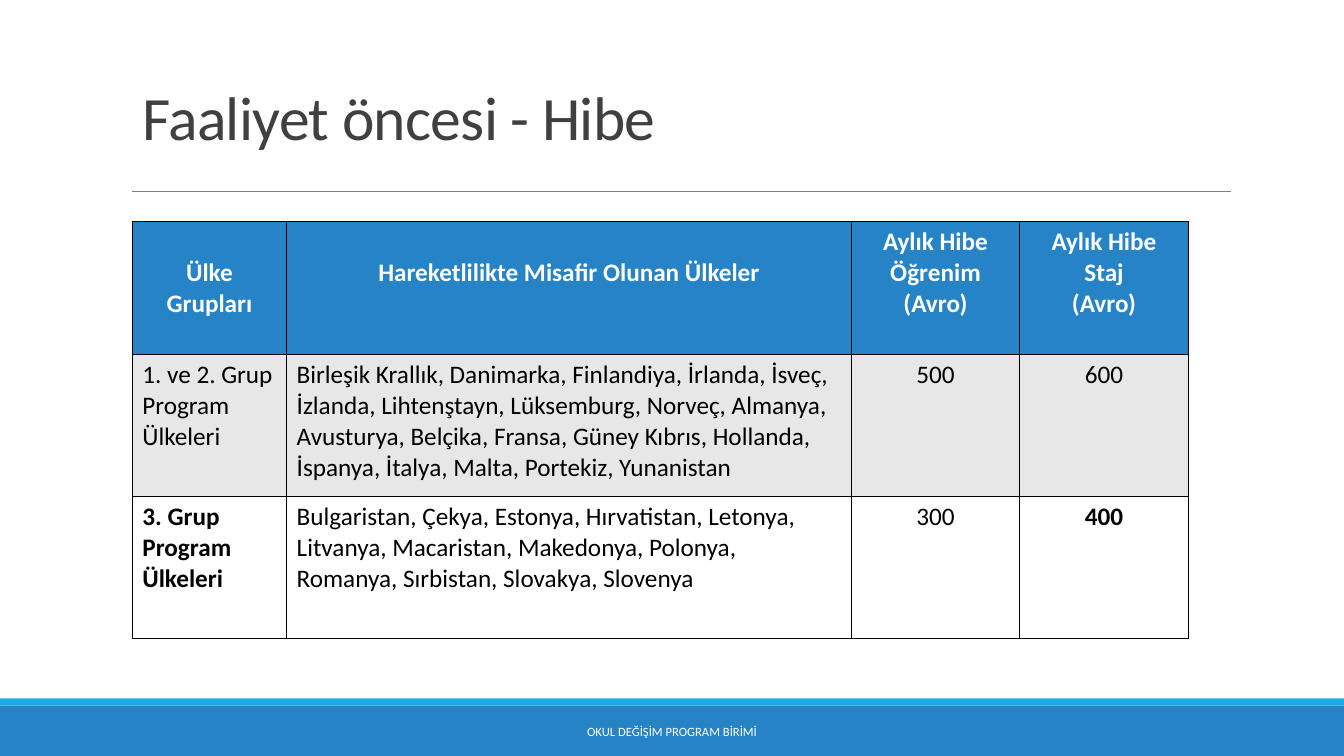
from lxml import etree
from pptx import Presentation
from pptx import util as u
from pptx.dml.color import RGBColor
from pptx.enum import shapes, text
from pptx.oxml import ns

PX = 9525
FONT = "Calibri"
COLORS = {
    "blue": "2683C6", "sky": "1CADE4", "rule": "808080", "title": "404040",
    "white": "FFFFFF", "black": "000000", "band": "E7E7E7",
}
COLUMNS = [147, 538, 160, 161]
ROWS = [127, 135, 135]
LINE = 29
HEADERS = [
    ["Ülke Grupları"],
    ["Hareketlilikte Misafir Olunan Ülkeler"],
    ["Aylık Hibe Öğrenim (Avro)"],
    ["Aylık Hibe Staj", "(Avro)"],
]
GRANTS = [
    ["1. ve 2. Grup Program Ülkeleri",
     "Birleşik Krallık, Danimarka, Finlandiya, İrlanda, İsveç, İzlanda, "
     "Lihtenştayn, Lüksemburg, Norveç, Almanya, Avusturya, Belçika, Fransa, "
     "Güney Kıbrıs, Hollanda, İspanya, İtalya, Malta, Portekiz, Yunanistan",
     "500", "600"],
    ["3. Grup Program Ülkeleri",
     "Bulgaristan, Çekya, Estonya, Hırvatistan, Letonya, Litvanya, "
     "Macaristan, Makedonya, Polonya, Romanya, Sırbistan, Slovakya, Slovenya",
     "300", "400"],
]
BOLD_CELLS = {(2, 0), (2, 3)}


def emu(*lengths):
    """Turn px lengths into EMU."""
    return [u.Emu(length * PX) for length in lengths]


def color(name):
    """Return a named colour."""
    return RGBColor.from_string(COLORS[name])


def write(frame, lines, size=18, ink="black", bold=False, align="LEFT",
          spacing=None, tracking=None):
    """Write one paragraph per line into a text frame."""
    frame.word_wrap = True
    for index, line in enumerate(lines):
        para = frame.paragraphs[0] if index == 0 else frame.add_paragraph()
        para.alignment = getattr(text.PP_ALIGN, align)
        if spacing:
            para.line_spacing = spacing
        span = para.add_run()
        span.text = line
        span.font.name = FONT
        span.font.size = u.Pt(size)
        span.font.bold = bold
        span.font.color.rgb = color(ink)
        if tracking:
            span.font._element.set("spc", str(tracking))


def add_bar(page, box, fill):
    """Draw a plain filled rectangle."""
    bar = page.shapes.add_shape(shapes.MSO_SHAPE.RECTANGLE, *emu(*box))
    bar.shadow.inherit = False
    bar.fill.solid()
    bar.fill.fore_color.rgb = color(fill)
    bar.line.fill.background()


def add_footer(page, box):
    """Draw the two footer bars and the unit's name."""
    left, top, width, height = box
    add_bar(page, (left, top + 7, width, height - 7), "blue")
    add_bar(page, (left, top, width, 7), "sky")
    label = page.shapes.add_textbox(*emu(left + 387, top + 13, 506, 38))
    label.text_frame.vertical_anchor = text.MSO_ANCHOR.MIDDLE
    write(label.text_frame, ["OKUL DEĞİŞİM PROGRAM BİRİMİ"], size=9,
          ink="white", align="CENTER")


def add_heading(page, box):
    """Fill the title placeholder and draw the rule below it."""
    left, top, width, height = box
    title = page.shapes.title
    title.left, title.top, title.width, title.height = emu(*box)
    frame = title.text_frame
    frame.auto_size = text.MSO_AUTO_SIZE.NONE
    frame.vertical_anchor = text.MSO_ANCHOR.BOTTOM
    write(frame, ["Faaliyet öncesi - Hibe"], size=44, ink="title",
          spacing=0.85, tracking=-50)
    level = top + height + 31
    rule = page.shapes.add_connector(
        shapes.MSO_CONNECTOR.STRAIGHT, *emu(left, level, left + 1046, level))
    rule.line.color.rgb = color("rule")
    rule.line.width = u.Pt(0.5)
    etree.SubElement(rule._element.spPr, ns.qn("a:effectLst"))


def add_borders(cell):
    """Give a cell black borders of one point."""
    properties = cell._tc.get_or_add_tcPr()
    for index, side in enumerate(("lnL", "lnR", "lnT", "lnB")):
        border = etree.Element(ns.qn(f"a:{side}"), w=str(u.Pt(1)))
        fill = etree.SubElement(border, ns.qn("a:solidFill"))
        etree.SubElement(fill, ns.qn("a:srgbClr"), val=COLORS["black"])
        properties.insert(index, border)


def fill_cell(cell, lines, fill, **style):
    """Set a cell's fill, borders and text."""
    cell.fill.solid()
    cell.fill.fore_color.rgb = color(fill)
    add_borders(cell)
    write(cell.text_frame, lines, **style)


def add_grants(page, box):
    """Draw the table of monthly grants by country group."""
    frame = page.shapes.add_table(len(ROWS), len(COLUMNS), *emu(*box))
    table = frame.table
    for column, width in zip(table.columns, emu(*COLUMNS)):
        column.width = width
    for row, height in zip(table.rows, emu(*ROWS)):
        row.height = height
    for index, lines in enumerate(HEADERS):
        cell = table.cell(0, index)
        fill_cell(cell, lines, "blue", ink="white", bold=True, align="CENTER")
        if index < 2:
            cell.margin_top = emu(5 + LINE)[0]
    for number, values in enumerate(GRANTS, 1):
        for index, value in enumerate(values):
            fill_cell(table.cell(number, index), [value],
                      "band" if number % 2 else "white",
                      bold=(number, index) in BOLD_CELLS,
                      align="LEFT" if index < 2 else "CENTER")


def main():
    """Build the slide and save the deck."""
    deck = Presentation()
    deck.slide_width, deck.slide_height = emu(1280, 720)
    page = deck.slides.add_slide(deck.slide_layouts[5])
    add_footer(page, (0, 665, 1280, 55))
    add_heading(page, (126, 53, 1065, 98))
    add_grants(page, (126, 211, sum(COLUMNS), sum(ROWS)))
    deck.save("out.pptx")


if __name__ == "__main__":
    main()
